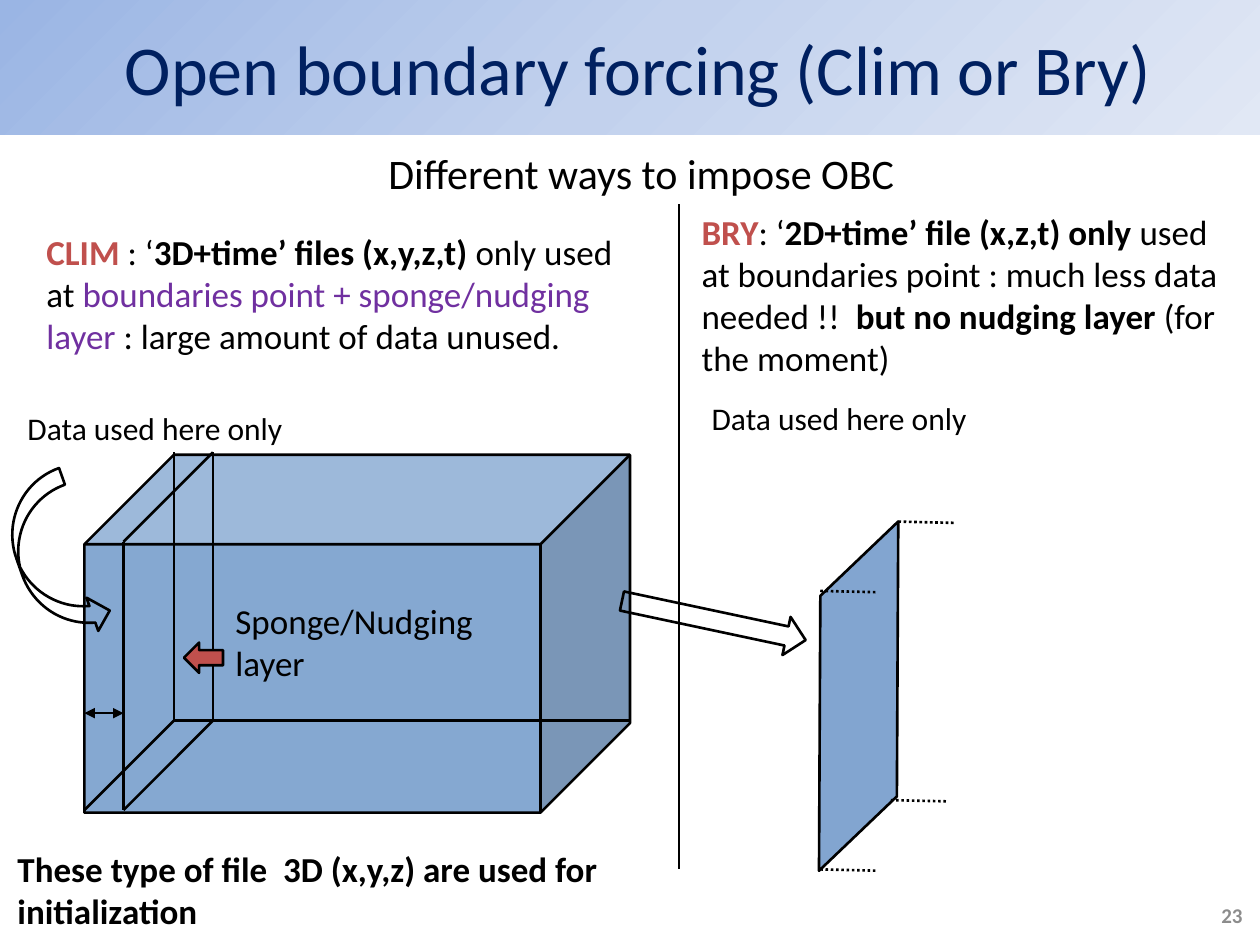
"""Builds the slide on open boundary forcing with climatology or boundary files."""
from copy import deepcopy

from lxml.etree import SubElement
from pptx import Presentation
from pptx.dml.color import RGBColor
from pptx.enum.dml import MSO_LINE
from pptx.enum.shapes import MSO_CONNECTOR, MSO_SHAPE
from pptx.enum.text import MSO_ANCHOR, PP_ALIGN
from pptx.oxml.ns import qn
from pptx.util import Inches, Pt

COLORS = {
    "ink": "000000", "title": "002060", "accent": "C0504D", "layer": "7030A0",
    "water": "4F81BD", "number": "8C8C8C",
}
TITLE_BAND = ("9AB5E4", "C2D1ED", "E1E8F5")


class SlideBuilder:
    """Holds the style and the current slide, and adds its elements."""

    font = "Calibri"
    line_width = Pt(1.5)

    def __init__(self, slide):
        self.slide = slide

    def add_run(self, paragraph, text, size, color="ink", bold=False):
        """Append one formatted run."""
        run = paragraph.add_run()
        run.text = text
        run.font.name = self.font
        run.font.size = Pt(size)
        run.font.bold = bold
        run.font.color.rgb = RGBColor.from_string(COLORS[color])

    def title(self, text, height):
        """Fill the title placeholder and lay it over a gradient band."""
        title = self.slide.shapes.title
        title.left = title.top = 0
        title.width, title.height = Inches(10), Inches(height)
        title.fill.gradient()
        title.fill.gradient_angle = 315
        stop_list = title._element.spPr.find(".//" + qn("a:gsLst"))
        stop_list.insert(1, deepcopy(stop_list[0]))
        for index, (stop, color) in enumerate(zip(title.fill.gradient_stops, TITLE_BAND)):
            stop.position = index / 2
            stop.color.rgb = RGBColor.from_string(color)
        frame = title.text_frame
        frame.vertical_anchor = MSO_ANCHOR.MIDDLE
        frame.paragraphs[0].alignment = PP_ALIGN.CENTER
        self.add_run(frame.paragraphs[0], text, 40, "title")

    def text(self, box, runs, size=20, align=PP_ALIGN.LEFT, wrap=True, anchor=MSO_ANCHOR.TOP):
        """Add a text box from (text, color, bold) runs."""
        frame = self.slide.shapes.add_textbox(*map(Inches, box)).text_frame
        frame.word_wrap = wrap
        frame.vertical_anchor = anchor
        frame.paragraphs[0].alignment = align
        for text, color, bold in runs:
            self.add_run(frame.paragraphs[0], text, size, color, bold)

    def shape(self, kind, box, fill=None, opacity=100, rotation=0, adjustment=None):
        """Add an outlined preset shape."""
        shape = self.slide.shapes.add_shape(kind, *map(Inches, box))
        shape.shadow.inherit = False
        shape.rotation = rotation
        if adjustment is not None:
            shape.adjustments[0] = adjustment
        if fill:
            shape.fill.solid()
            shape.fill.fore_color.rgb = RGBColor.from_string(COLORS[fill])
            if opacity < 100:
                color = shape._element.spPr.find(qn("a:solidFill"))[0]
                SubElement(color, qn("a:alpha"), val=str(opacity * 1000))
        else:
            shape.fill.background()
        shape.line.color.rgb = RGBColor.from_string(COLORS["ink"])
        shape.line.width = self.line_width

    def line(self, start, end, dotted=False, arrows=False):
        """Add a straight line, optionally dotted or with arrows at both ends."""
        line = self.slide.shapes.add_connector(
            MSO_CONNECTOR.STRAIGHT, *map(Inches, (*start, *end)))
        line.line.color.rgb = RGBColor.from_string(COLORS["ink"])
        line.line.width = self.line_width
        if dotted:
            line.line.dash_style = MSO_LINE.ROUND_DOT
        if arrows:
            for tag in ("a:headEnd", "a:tailEnd"):
                SubElement(line.line._ln, qn(tag), type="triangle")
        SubElement(line._element.spPr, qn("a:effectLst"))


def main():
    """Build and save the slide."""
    deck = Presentation()
    deck.slide_width, deck.slide_height = Inches(10), Inches(7.5)
    builder = SlideBuilder(deck.slides.add_slide(deck.slide_layouts[5]))

    builder.title(" Open boundary forcing (Clim or Bry)", 1.07)
    builder.text((7.63, 7.06, 2.33, 0.4), [("23", "number", True)], 12,
                 PP_ALIGN.RIGHT, anchor=MSO_ANCHOR.MIDDLE)
    builder.text((0.27, 1.78, 4.73, 1.45), [
        ("CLIM", "accent", True),
        (" : ‘", "ink", False),
        ("3D+time’ files (x,y,z,t) ", "ink", True),
        ("only used at ", "ink", False),
        ("boundaries point + sponge/nudging layer ", "layer", False),
        (": large amount of data unused.", "ink", False),
    ])

    builder.shape(MSO_SHAPE.CUBE, (0.67, 3.61, 4.33, 2.84), "water", 69)
    front, back = (0.67, 0.98), (1.38, 1.69)
    back_top, back_bottom, front_top, front_bottom = 3.59, 5.72, 4.3, 6.43
    for front_x, back_x in zip(front, back):
        builder.line((back_x, back_top), (back_x, back_bottom))
        builder.line((back_x, back_bottom), (front_x, front_bottom))
    builder.line((back[0], back_bottom), (5, back_bottom))
    builder.line((front[1], front_top), (front[1], front_bottom))
    builder.line((back[1], back_top), (front[1], front_top))

    builder.text((2.74, 1.12, 4.7, 0.51), [("Different ways to impose OBC", "ink", False)],
                 24, PP_ALIGN.CENTER, wrap=False)
    for left, top in ((0.12, 3.2), (5.55, 3.12)):
        builder.text((left, top, 2.46, 0.4), [("Data used here only", "ink", False)],
                     18, wrap=False)
    builder.shape(MSO_SHAPE.CURVED_RIGHT_ARROW, (0.15, 3.77, 0.56, 1.34), rotation=340.4)
    builder.line((5.39, 1.62), (5.39, 6.9))
    builder.text((5.47, 1.62, 4.33, 1.45), [
        ("BRY", "accent", True),
        (": ‘", "ink", False),
        ("2D+time’ file (x,z,t) only ", "ink", True),
        ("used at boundaries point : much less data needed !!  ", "ink", False),
        ("but no nudging layer", "ink", True),
        (" (for the moment)", "ink", False),
    ])
    builder.text((0.04, 6.68, 5.28, 0.77), [
        ("These type of file  3D (x,y,z) are used for initialization", "ink", True)])

    builder.shape(MSO_SHAPE.PARALLELOGRAM, (5.63, 4.74, 2.37, 1.57), "water", 71,
                  rotation=316.3, adjustment=0.965)
    for left, top in ((7.13, 4.14), (6.51, 4.69), (7.07, 6.35), (6.51, 6.9)):
        builder.line((left, top), (left + 0.44, top + 0.01), dotted=True)
    builder.shape(MSO_SHAPE.RIGHT_ARROW, (4.92, 4.77, 1.49, 0.31), rotation=12)

    builder.line((front[0], 5.66), (front[1], 5.66), arrows=True)
    builder.text((1.77, 4.71, 2.44, 0.77), [("Sponge/Nudging layer", "ink", False)])
    builder.shape(MSO_SHAPE.LEFT_ARROW, (1.46, 5.1, 0.31, 0.24), "accent")

    deck.save("out.pptx")


if __name__ == "__main__":
    main()
